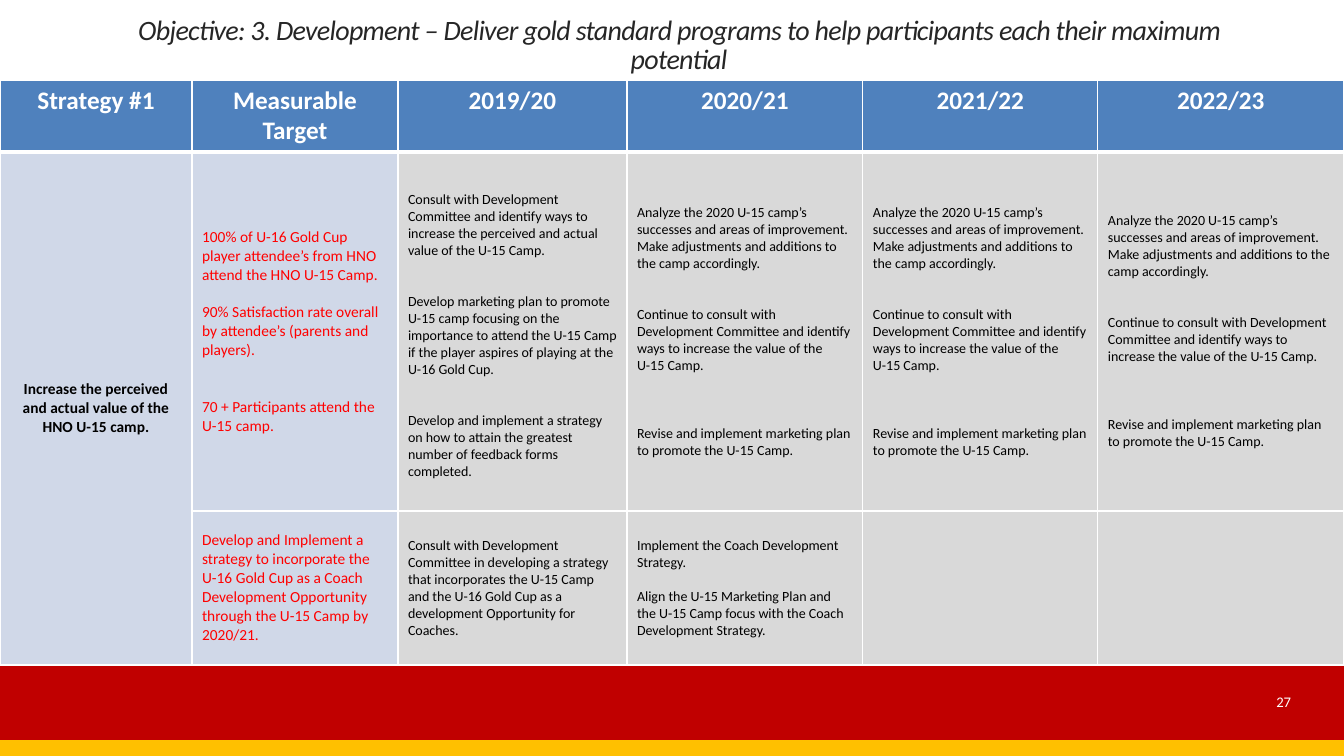
from lxml.etree import SubElement
from pptx import Presentation
from pptx.dml.color import RGBColor
from pptx.enum.shapes import MSO_SHAPE as Shape
from pptx.enum.text import MSO_ANCHOR as Anchor, PP_ALIGN as Align
from pptx.oxml.ns import qn
from pptx.util import Pt

PX = 914400 / 100.8
WIDTH, HEIGHT = 1344, 756

WHITE = RGBColor(0xFF, 0xFF, 0xFF)
BLACK = RGBColor(0, 0, 0)
CHARCOAL = RGBColor(0x26, 0x26, 0x26)
BRIGHT_RED = RGBColor(0xFF, 0, 0)
DARK_RED = RGBColor(0xC0, 0, 0)
GOLD = RGBColor(0xFF, 0xC0, 0)
BLUE = RGBColor(0x4F, 0x81, 0xBD)
PALE_BLUE = RGBColor(0xD0, 0xD8, 0xE8)
GREY = RGBColor(0xD9, 0xD9, 0xD9)

HEADER = {"size": Pt(18), "bold": True, "color": WHITE}
STRATEGY = {"size": Pt(11), "bold": True, "color": BLACK}
TARGET = {"size": Pt(11), "bold": False, "color": BRIGHT_RED}
ACTION = {"size": Pt(10), "bold": False, "color": BLACK}
TITLE = {"size": Pt(20), "italic": True, "color": CHARCOAL}
PAGE_NUMBER = {"size": Pt(10.5), "color": WHITE}

COLUMNS = [192, 206, 229, 236, 235, 246]
ROWS = [72, 359, 154]
HEADINGS = ["Strategy #1", "Measurable Target",
            "2019/20", "2020/21", "2021/22", "2022/23"]
STRATEGY_TEXT = "Increase the perceived and actual value of the HNO U-15 camp."

# Each entry pairs a paragraph with the space before it in points
CAMP_TARGETS = [
    ("100% of U-16 Gold Cup player attendee’s from HNO attend the HNO U-15 Camp.", 0),
    ("90% Satisfaction rate overall by attendee’s (parents and players).", 13.4),
    ("70 + Participants attend the U-15 camp.", 26.8),
]
FIRST_YEAR = [
    ("Consult with Development Committee and identify ways to increase the "
     "perceived and actual value of the U-15 Camp.", 0),
    ("Develop marketing plan to promote U-15 camp focusing on the importance to "
     "attend the U-15 Camp if the player aspires of playing at the U-16 Gold Cup.", 24.4),
    ("Develop and implement a strategy on how to attain the greatest number of "
     "feedback forms completed.", 24.4),
]
LATER_YEARS = [
    ("Analyze the 2020 U-15 camp’s successes and areas of improvement. Make "
     "adjustments and additions to the camp accordingly.", 0),
    ("Continue to consult with Development Committee and identify ways to "
     "increase the value of the U-15 Camp.", 24.4),
    ("Revise and implement marketing plan to promote the U-15 Camp.", 36.6),
]
COACH_TARGET = [
    ("Develop and Implement a strategy to incorporate the U-16 Gold Cup as a Coach "
     "Development Opportunity through the U-15 Camp by 2020/21.", 0),
]
COACH_FIRST_YEAR = [
    ("Consult with Development Committee in developing a strategy that incorporates "
     "the U-15 Camp and the U-16 Gold Cup as a development Opportunity for Coaches.", 0),
]
COACH_SECOND_YEAR = [
    ("Implement the Coach Development Strategy.", 0),
    ("Align the U-15 Marketing Plan and the U-15 Camp focus with the Coach "
     "Development Strategy.", 12.2),
]
BODY_ROWS = [
    [CAMP_TARGETS, FIRST_YEAR, LATER_YEARS, LATER_YEARS, LATER_YEARS],
    [COACH_TARGET, COACH_FIRST_YEAR, COACH_SECOND_YEAR, [], []],
]


def px(length):
    return round(length * PX)


def set_font(font, style):
    font.name = "Calibri"
    for name, value in style.items():
        if name == "color":
            font.color.rgb = value
        else:
            setattr(font, name, value)


def write(text_frame, paragraphs, style, align):
    for index, (text, gap) in enumerate(paragraphs):
        paragraph = text_frame.paragraphs[0] if index == 0 else text_frame.add_paragraph()
        paragraph.alignment = align
        if gap:
            paragraph.space_before = Pt(gap)
        run = paragraph.add_run()
        run.text = text
        set_font(run.font, style)


def add_band(slide, top, height, color):
    band = slide.shapes.add_shape(Shape.RECTANGLE, 0, px(top), px(WIDTH), px(height))
    band.shadow.inherit = False
    band.fill.solid()
    band.fill.fore_color.rgb = color
    band.line.fill.background()


def add_text(slide, box, text, style, align, anchor):
    text_frame = slide.shapes.add_textbox(*map(px, box)).text_frame
    text_frame.word_wrap = True
    text_frame.vertical_anchor = anchor
    write(text_frame, [(text, 0)], style, align)
    return text_frame.paragraphs[0]


def set_borders(cell, top, bottom):
    properties = cell._tc.get_or_add_tcPr()
    for side, points in (("L", 1), ("R", 1), ("T", top), ("B", bottom)):
        line = SubElement(properties, qn(f"a:ln{side}"), w=str(Pt(points)))
        fill = SubElement(line, qn("a:solidFill"))
        SubElement(fill, qn("a:srgbClr"), val=str(WHITE))


def fill_cell(cell, paragraphs, style, color, align=Align.LEFT, anchor=Anchor.MIDDLE):
    cell.fill.solid()
    cell.fill.fore_color.rgb = color
    cell.vertical_anchor = anchor
    write(cell.text_frame, paragraphs, style, align)


def add_plan_table(slide):
    frame = slide.shapes.add_table(len(ROWS), len(COLUMNS), 0, px(80),
                                   px(WIDTH), px(sum(ROWS)))
    table = frame.table
    table.first_row = table.horz_banding = False
    for column, width in zip(table.columns, COLUMNS):
        column.width = px(width)
    for row, height in zip(table.rows, ROWS):
        row.height = px(height)

    # White rules, with a heavy one under the header
    for row, (top, bottom) in enumerate([(1, 3), (3, 1), (1, 1)]):
        for column in range(len(COLUMNS)):
            set_borders(table.cell(row, column), top, bottom)

    # Header row
    for column, heading in enumerate(HEADINGS):
        fill_cell(table.cell(0, column), [(heading, 0)], HEADER, BLUE,
                  Align.CENTER, Anchor.TOP)

    # Strategy beside both body rows
    table.cell(1, 0).merge(table.cell(2, 0))
    fill_cell(table.cell(1, 0), [(STRATEGY_TEXT, 0)], STRATEGY, PALE_BLUE, Align.CENTER)

    # Targets and yearly actions
    for row, contents in enumerate(BODY_ROWS, start=1):
        for column, paragraphs in enumerate(contents, start=1):
            style, color = (TARGET, PALE_BLUE) if column == 1 else (ACTION, GREY)
            fill_cell(table.cell(row, column), paragraphs, style, color)
    first_year = table.cell(1, 2)
    first_year.vertical_anchor = Anchor.TOP
    first_year.margin_top = px(39)


def main():
    presentation = Presentation()
    presentation.slide_width, presentation.slide_height = px(WIDTH), px(HEIGHT)
    slide = presentation.slides.add_slide(presentation.slide_layouts[6])

    # Footer bands and page number
    add_band(slide, 665, 75, DARK_RED)
    add_band(slide, 740, 16, GOLD)
    add_text(slide, (1157, 682, 144, 40), "27", PAGE_NUMBER, Align.RIGHT, Anchor.MIDDLE)

    add_plan_table(slide)

    # Title
    title = add_text(slide, (114, 20, 1130, 60),
                     "Objective: 3. Development – Deliver gold standard programs to "
                     "help participants each their maximum potential",
                     TITLE, Align.CENTER, Anchor.BOTTOM)
    title.line_spacing = 0.85
    title.runs[0].font._element.set("spc", "-50")

    presentation.save("out.pptx")


if __name__ == "__main__":
    main()
